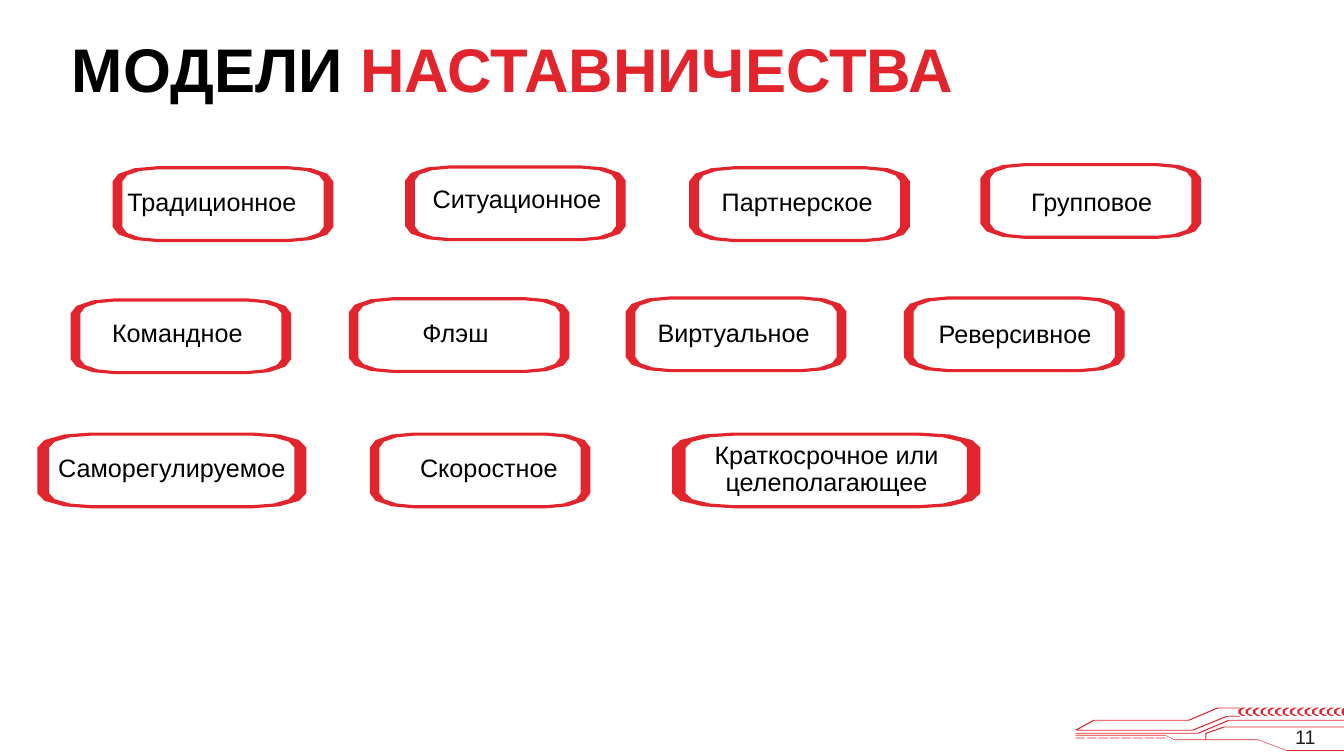
from dataclasses import dataclass
from math import cos, pi, sin

from pptx import Presentation
from pptx.dml.color import RGBColor
from pptx.enum.text import MSO_ANCHOR, PP_ALIGN
from pptx.util import Cm, Pt

LEFT, CENTER, RIGHT = PP_ALIGN.LEFT, PP_ALIGN.CENTER, PP_ALIGN.RIGHT
TOP, MIDDLE = MSO_ANCHOR.TOP, MSO_ANCHOR.MIDDLE
RED, BLACK, GRAPHITE = "E2252C", "000000", "231F20"
PAGE_WIDTH, PAGE_HEIGHT = 33.87, 19.05
FRAME_HEIGHT, LABEL_HEIGHT = 1.91, 1.17
ARC_STEPS = 3

Point = tuple[float, float]
Contour = list[Point]


@dataclass(frozen=True)
class Model:
    """A mentoring model: its frame and its label, in centimetres."""
    name: str
    left: float
    top: float
    label_left: float
    label_top: float
    width: float = 5.56
    label_width: float = 5.18


@dataclass(frozen=True)
class Span:
    text: str
    color: str


@dataclass(frozen=True)
class TextStyle:
    size: float
    bold: bool = False
    align: PP_ALIGN = LEFT
    anchor: MSO_ANCHOR = TOP
    line_spacing: float = 1.0
    margins: tuple[float, float, float, float] = (0, 0, 0, 0)


TITLE_STYLE = TextStyle(44, bold=True, margins=(0.03, 0.06, 0, 0))
LABEL_STYLE = TextStyle(18, align=CENTER, anchor=MIDDLE, line_spacing=0.9,
                        margins=(0.25, 0.13, 0.25, 0.13))
NUMBER_STYLE = TextStyle(14, align=RIGHT, anchor=MIDDLE)

MODELS = [
    Model("Традиционное ", 2.84, 4.19, 2.84, 4.55),
    Model("Ситуационное", 10.21, 4.17, 10.44, 4.47),
    Model("Партнерское", 17.37, 4.19, 17.5, 4.55),
    Model("Групповое", 24.71, 4.11, 24.92, 4.55),
    Model("Командное", 1.78, 7.52, 1.88, 7.85),
    Model("Флэш", 8.79, 7.49, 8.89, 7.85),
    Model("Виртуальное", 15.77, 7.47, 15.9, 7.85),
    Model("Реверсивное", 22.78, 7.47, 22.99, 7.87),
    Model("Саморегулируемое", 0.94, 10.9, 0.76, 11.25, 6.78, 7.14),
    Model("Скоростное", 9.32, 10.9, 9.73, 11.25),
    Model("Краткосрочное или целеполагающее", 16.94, 10.9, 17.17, 11.25, 7.77, 7.32),
]

# Circuit ornament in the lower right corner
TRACE_THICKNESS = 0.02
TRACES: list[Contour] = [
    [(27.1, 18.52), (29.36, 18.52), (29.59, 18.63), (30.38, 18.63)],
    [(31.24, 17.83), (30.68, 17.83), (29.95, 18.14), (27.56, 18.14),
     (27.1, 18.39), (30.05, 18.39), (30.91, 18.04), (31.24, 18.04)],
    [(33.87, 18.31), (30.84, 18.31), (30.38, 18.47), (30.38, 18.63),
     (31.7, 18.63), (32.41, 18.9), (33.87, 18.9)],
    [(33.87, 18.14), (30.96, 18.14), (30.18, 18.47), (27.1, 18.47)],
]
DASH_COUNT, DASH_LEFT, DASH_TOP, DASH_PITCH, DASH_LENGTH = 8, 27.1, 18.59, 0.29, 0.23
CHEVRON_COUNT, CHEVRON_LEFT, CHEVRON_LAST = 15, 31.21, 33.81
CHEVRON: Contour = [(0.18, 17.83), (0.1, 17.83), (0, 17.89), (0, 17.98),
                    (0.1, 18.04), (0.18, 18.04), (0.06, 17.98), (0.06, 17.9)]


def rgb(color: str) -> RGBColor:
    return RGBColor.from_string(color)


def rounded_contour(left: float, top: float, width: float, height: float,
                    radius_x: float, radius_y: float) -> Contour:
    """Rectangle outline with elliptical corners, clockwise from the right side."""
    near_x, far_x = left + radius_x, left + width - radius_x
    near_y, far_y = top + radius_y, top + height - radius_y
    centers = [(far_x, far_y), (near_x, far_y), (near_x, near_y), (far_x, near_y)]
    return [
        (x + radius_x * cos(angle), y + radius_y * sin(angle))
        for quarter, (x, y) in enumerate(centers)
        for angle in (pi / 2 * (quarter + step / ARC_STEPS) for step in range(ARC_STEPS + 1))
    ]


def trace_contour(points: Contour) -> Contour:
    """Thin outline along an open line, kept inside the page."""
    shifted = [(min(x + TRACE_THICKNESS, PAGE_WIDTH), y + TRACE_THICKNESS)
               for x, y in reversed(points)]
    return points + shifted


def draw_red_outline(page, contours: list[Contour]) -> None:
    """One filled shape; a contour inside another becomes a hole."""
    paths = [[(Cm(x), Cm(y)) for x, y in contour] for contour in contours]
    builder = page.shapes.build_freeform(*paths[0][0])
    for number, path in enumerate(paths):
        if number:
            builder.move_to(*path[0])
        builder.add_line_segments(path[1:], close=True)
    shape = builder.convert_to_shape()
    shape.shadow.inherit = False
    shape.fill.solid()
    shape.fill.fore_color.rgb = rgb(RED)
    shape.line.fill.background()


def draw_text(page, left: float, top: float, width: float, height: float,
              spans: list[Span], style: TextStyle) -> None:
    box = page.shapes.add_textbox(Cm(left), Cm(top), Cm(width), Cm(height))
    frame = box.text_frame
    frame.word_wrap = True
    frame.vertical_anchor = style.anchor
    for side, margin in zip(("left", "top", "right", "bottom"), style.margins):
        setattr(frame, f"margin_{side}", Cm(margin))
    para = frame.paragraphs[0]
    para.alignment = style.align
    para.line_spacing = style.line_spacing
    font_format = {"name": "Arial", "size": Pt(style.size), "bold": style.bold}
    for span in spans:
        run = para.add_run()
        run.text = span.text
        for attribute, value in font_format.items():
            setattr(run.font, attribute, value)
        run.font.color.rgb = rgb(span.color)


def draw_ornament(page) -> None:
    dashes = []
    for number in range(DASH_COUNT):
        start = DASH_LEFT + number * DASH_PITCH
        dashes.append(trace_contour([(start, DASH_TOP), (start + DASH_LENGTH, DASH_TOP)]))
    pitch = (CHEVRON_LAST - CHEVRON_LEFT) / (CHEVRON_COUNT - 1)
    chevrons = [
        [(min(CHEVRON_LEFT + number * pitch + x, PAGE_WIDTH), y) for x, y in CHEVRON]
        for number in range(CHEVRON_COUNT)
    ]
    traces = [trace_contour(points) for points in TRACES]
    draw_red_outline(page, dashes + traces + chevrons)


def draw_model(page, model: Model) -> None:
    inset_x, inset_y = 0.044 * model.width, 0.08
    radius_x, radius_y = 0.2 * model.width, 0.38
    outer = rounded_contour(model.left, model.top, model.width, FRAME_HEIGHT,
                            radius_x, radius_y)
    inner = rounded_contour(model.left + inset_x, model.top + inset_y,
                            model.width - 2 * inset_x, FRAME_HEIGHT - 2 * inset_y,
                            radius_x - inset_x, radius_y - inset_y)
    draw_red_outline(page, [outer, inner[::-1]])
    draw_text(page, model.label_left, model.label_top, model.label_width, LABEL_HEIGHT,
              [Span(model.name, BLACK)], LABEL_STYLE)


def main() -> None:
    deck = Presentation()
    deck.slide_width, deck.slide_height = Cm(PAGE_WIDTH), Cm(PAGE_HEIGHT)
    page = deck.slides.add_slide(deck.slide_layouts[6])
    draw_ornament(page)
    draw_text(page, 31.75, 18.26, 1.4, 0.61, [Span("11", GRAPHITE)], NUMBER_STYLE)
    draw_text(page, 1.78, 0.71, 23.39, 1.91,
              [Span("МОДЕЛИ ", BLACK), Span("НАСТАВНИЧЕСТВА", RED)], TITLE_STYLE)
    for model in MODELS:
        draw_model(page, model)
    deck.save("out.pptx")


if __name__ == "__main__":
    main()
